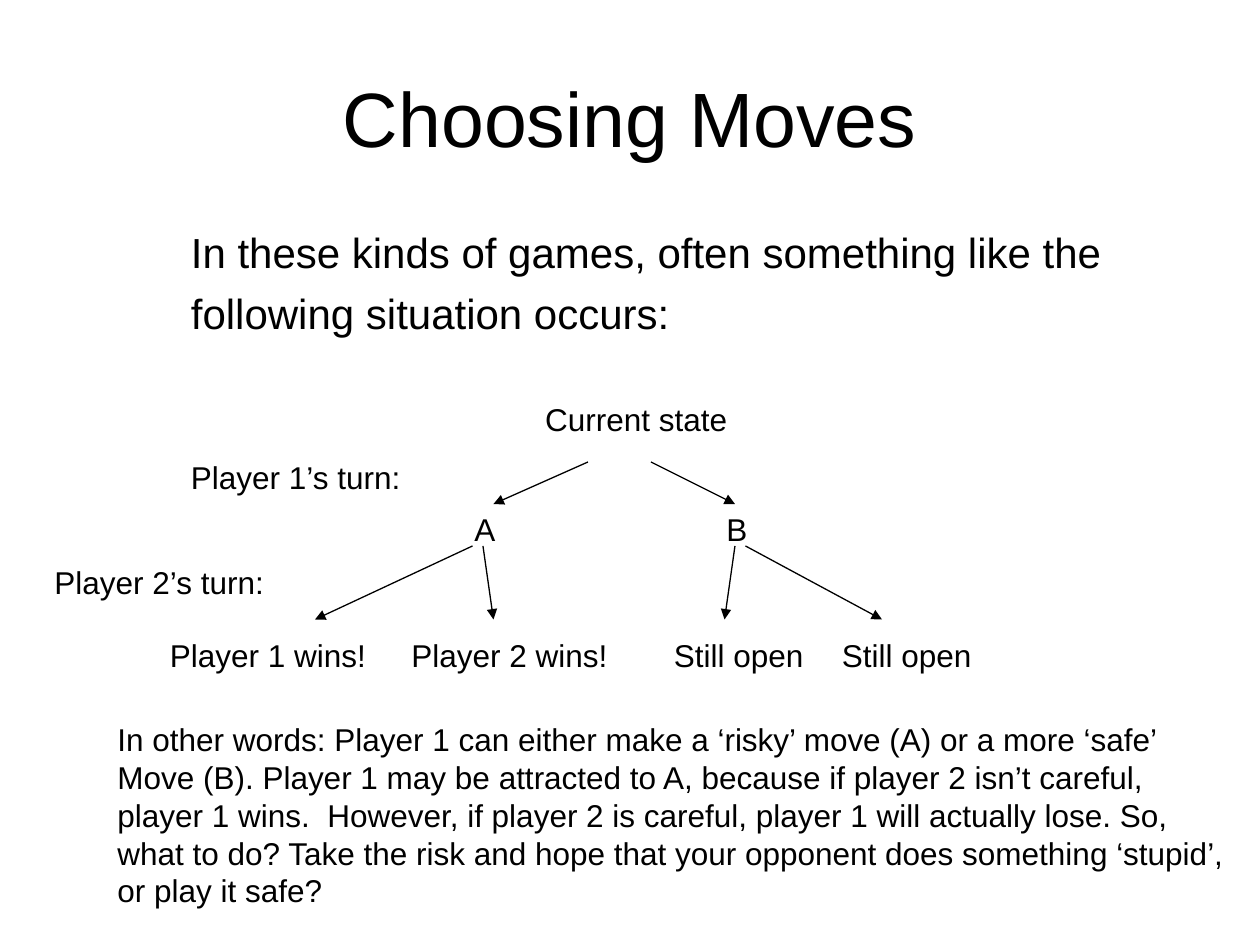
from lxml.etree import SubElement
from pptx import Presentation
from pptx.dml.color import RGBColor
from pptx.enum.shapes import MSO_CONNECTOR
from pptx.enum.text import MSO_ANCHOR, MSO_AUTO_SIZE, PP_ALIGN
from pptx.oxml.ns import qn
from pptx.util import Pt

BLACK = RGBColor(0x00, 0x00, 0x00)
WHITE = RGBColor(0xFF, 0xFF, 0xFF)
FONT = "Arial"


def format_paragraph(p, size, **formats):
    for name, value in formats.items():
        setattr(p, name, value)
    for name, value in {"name": FONT, "size": Pt(size), "bold": False}.items():
        setattr(p.font, name, value)
    p.font.color.rgb = BLACK


def add_title(s, box, text):
    title = s.shapes.title
    for name, value in zip(("left", "top", "width", "height"), box):
        setattr(title, name, Pt(value))
    tf = title.text_frame
    tf.text = text
    tf.vertical_anchor = MSO_ANCHOR.MIDDLE
    format_paragraph(tf.paragraphs[0], 44, alignment=PP_ALIGN.CENTER)


def add_text(s, box, lines, size=18, **formats):
    tf = s.shapes.add_textbox(*map(Pt, box)).text_frame
    tf.word_wrap = False
    tf.auto_size = MSO_AUTO_SIZE.SHAPE_TO_FIT_TEXT
    for i, line in enumerate(lines):
        p = tf.add_paragraph() if i else tf.paragraphs[0]
        p.add_run().text = line
        format_paragraph(p, size, **formats)


def add_arrow(s, x1, y1, x2, y2):
    line = s.shapes.add_connector(
        MSO_CONNECTOR.STRAIGHT, Pt(x1), Pt(y1), Pt(x2), Pt(y2))
    line.line.color.rgb = BLACK
    line.line.width = Pt(0.75)
    SubElement(line.line._get_or_add_ln(), qn("a:tailEnd"), type="triangle")
    SubElement(line._element.spPr, qn("a:effectLst"))


def add_game_tree(s, left, top):
    # States and turn labels: x, y, width, text
    labels = [
        (280.5, 0, 119, "Current state"),
        (240, 63, 27, "A"),
        (384, 63, 27, "B"),
        (78, 33, 135, "Player 1’s turn:"),
        (0, 93, 135, "Player 2’s turn:"),
        (66, 135, 127, "Player 1 wins!"),
        (204, 135, 127, "Player 2 wins!"),
        (354, 135, 89, "Still open"),
        (450, 135, 89, "Still open"),
    ]
    for x, y, width, text in labels:
        add_text(s, (left + x, top + y, width, 29), [text])

    # Moves of each turn: start y, end y, (start x, end x) pairs
    turns = [
        (39, 63, [(312, 258), (348, 396)]),
        (87, 129, [(246, 156), (252, 258), (396, 390), (402, 480)]),
    ]
    for y1, y2, moves in turns:
        for x1, x2 in moves:
            add_arrow(s, left + x1, top + y1, left + x2, top + y2)


def main():
    prs = Presentation()
    prs.slide_width, prs.slide_height = Pt(720), Pt(540)
    s = prs.slides.add_slide(prs.slide_layouts[5])
    s.background.fill.solid()
    s.background.fill.fore_color.rgb = WHITE

    add_title(s, (36, 21.6, 648, 90), "Choosing Moves")
    # Introduction
    add_text(s, (102, 126, 541.5, 99), [
        "In these kinds of games, often something like the",
        "following situation occurs:",
    ], size=24, space_before=Pt(6))
    add_game_tree(s, 24, 225)
    # Explanation
    add_text(s, (60, 408, 649, 115), [
        "In other words: Player 1 can either make a ‘risky’ move (A) or a more ‘safe’",
        "Move (B). Player 1 may be attracted to A, because if player 2 isn’t careful,",
        "player 1 wins.  However, if player 2 is careful, player 1 will actually lose. So,",
        "what to do? Take the risk and hope that your opponent does something ‘stupid’,",
        "or play it safe?",
    ])
    prs.save("out.pptx")


if __name__ == "__main__":
    main()
